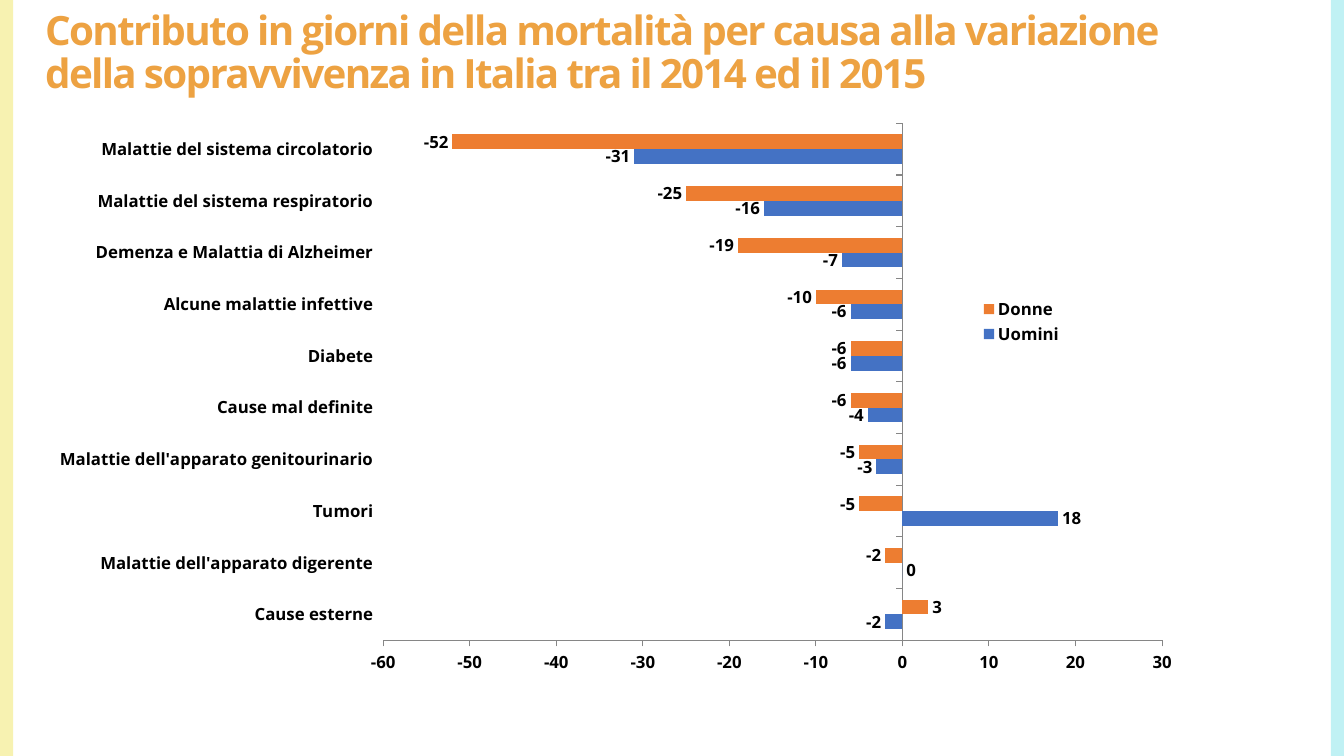
from lxml import etree
from pptx import Presentation
from pptx.chart.data import CategoryChartData
from pptx.dml.color import RGBColor
from pptx.enum.chart import (XL_CHART_TYPE, XL_LABEL_POSITION, XL_LEGEND_POSITION,
                             XL_TICK_LABEL_POSITION, XL_TICK_MARK)
from pptx.enum.shapes import MSO_SHAPE
from pptx.enum.text import MSO_ANCHOR
from pptx.oxml.ns import qn
from pptx.util import Inches, Pt

TITLE = ("Contributo in giorni della mortalità per causa alla variazione "
         "della sopravvivenza in Italia tra il 2014 ed il 2015")
SERIES = ("Uomini", "Donne")
CAUSES = [  # cause, men, women
    ("Cause esterne", -2, 3),
    ("Malattie dell'apparato digerente", 0, -2),
    ("Tumori", 18, -5),
    ("Malattie dell'apparato genitourinario", -3, -5),
    ("Cause mal definite", -4, -6),
    ("Diabete", -6, -6),
    ("Alcune malattie infettive", -6, -10),
    ("Demenza e Malattia di Alzheimer", -7, -19),
    ("Malattie del sistema respiratorio", -16, -25),
    ("Malattie del sistema circolatorio", -31, -52),
]
COLORS = {"Uomini": "4472C4", "Donne": "ED7D31", "title": "EDA242", "text": "000000",
          "axis": "868686", "left": "F7F2B1", "right": "C0F1F4"}
FONT = "Open Sans"
WIDTH, HEIGHT, BAND = 13.33, 7.5, 0.13


def color(name):
    return RGBColor.from_string(COLORS[name])


def style(font, size, tint):
    font.name, font.size, font.bold = FONT, Pt(size), True
    font.color.rgb = color(tint)


def add_band(slide, left, tint):
    band = slide.shapes.add_shape(MSO_SHAPE.RECTANGLE, Inches(left), 0,
                                  Inches(BAND), Inches(HEIGHT))
    band.shadow.inherit = False
    band.fill.solid()
    band.fill.fore_color.rgb = color(tint)
    band.line.fill.background()


def add_text(slide, text, box, size, tint, leading=1.0, tracking=0):
    """Add a bold text box; tracking is in points."""
    frame = slide.shapes.add_textbox(*map(Inches, box)).text_frame
    frame.word_wrap = True
    frame.vertical_anchor = MSO_ANCHOR.MIDDLE
    para = frame.paragraphs[0]
    para.line_spacing = leading
    run = para.add_run()
    run.text = text
    style(run.font, size, tint)
    run.font._element.set("spc", str(round(tracking * 100)))


def place(parent, index, box, inner=False):
    """Fix a chart part at x, y, w, h, as fractions of the chart."""
    for old in parent.findall(qn("c:layout")):
        parent.remove(old)
    layout = etree.Element(qn("c:layout"))
    parent.insert(index, layout)
    manual = etree.SubElement(layout, qn("c:manualLayout"))
    items = [("layoutTarget", "inner")] if inner else []
    items += [("xMode", "edge"), ("yMode", "edge"), *zip("xywh", box)]
    for tag, value in items:
        etree.SubElement(manual, qn(f"c:{tag}")).set("val", str(value))


def add_bars(slide, box):
    data = CategoryChartData(number_format="0")
    data.categories = [row[0] for row in CAUSES]
    for col, name in enumerate(SERIES, 1):
        data.add_series(name, [row[col] for row in CAUSES])
    chart = slide.shapes.add_chart(XL_CHART_TYPE.BAR_CLUSTERED,
                                   *map(Inches, box), data).chart
    chart.has_title = False
    style(chart.font, 12, "text")

    plot = chart.plots[0]
    plot.gap_width, plot.overlap, plot.vary_by_categories = 150, 0, False
    for bars in plot.series:
        bars.invert_if_negative = False
        bars.format.fill.solid()
        bars.format.fill.fore_color.rgb = color(bars.name)
        labels = bars.data_labels
        labels.show_value = True
        labels.number_format, labels.number_format_is_linked = "0", False
        labels.position = XL_LABEL_POSITION.OUTSIDE_END
        style(labels.font, 12, "text")

    days = chart.value_axis
    days.minimum_scale, days.maximum_scale, days.major_unit = -60, 30, 10
    days.tick_labels.number_format = "0"
    days.tick_labels.number_format_is_linked = False
    for axis in (chart.category_axis, days):
        axis.has_major_gridlines = False
        axis.major_tick_mark = XL_TICK_MARK.OUTSIDE
        axis.minor_tick_mark = XL_TICK_MARK.NONE
        axis.tick_label_position = XL_TICK_LABEL_POSITION.LOW
        axis.format.line.color.rgb = color("axis")
        axis.format.line.width = Pt(0.75)
        style(axis.tick_labels.font, 12, "text")

    chart.has_legend = True
    legend = chart.legend
    legend.position = XL_LEGEND_POSITION.RIGHT
    legend.include_in_layout = False
    style(legend.font, 12, "text")
    place(legend._element, 1, (0.75, 0.32, 0.07, 0.09))
    area = chart._chartSpace.find(".//" + qn("c:plotArea"))
    place(area, 0, (0.277, 0.02, 0.62, 0.9), inner=True)


def main():
    deck = Presentation()
    deck.slide_width, deck.slide_height = Inches(WIDTH), Inches(HEIGHT)
    slide = deck.slides.add_slide(deck.slide_layouts[6])
    add_band(slide, 0, "left")
    add_band(slide, WIDTH - BAND, "right")
    add_text(slide, TITLE, (0.35, 0.15, 11.8, 0.77), size=28.8, tint="title",
             leading=0.9, tracking=-1.2)
    add_bars(slide, (0.35, 1.11, 12.46, 5.7))
    deck.save("out.pptx")


if __name__ == "__main__":
    main()
